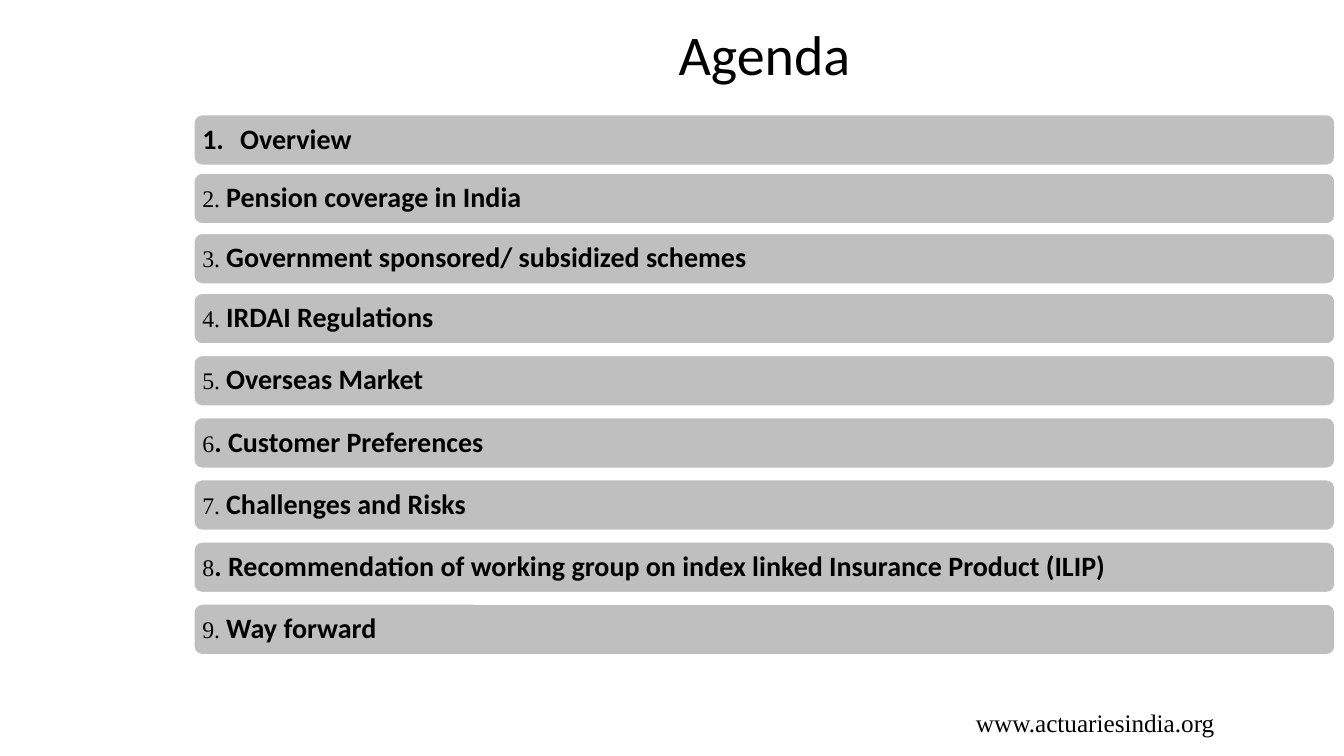
"""Build the agenda slide: a title, nine numbered bars and a web address."""
from dataclasses import dataclass

from lxml import etree
from pptx import Presentation
from pptx.dml.color import RGBColor
from pptx.enum.shapes import MSO_SHAPE
from pptx.enum.text import MSO_ANCHOR, PP_ALIGN
from pptx.oxml.ns import qn
from pptx.util import Pt

ROUNDED = MSO_SHAPE.ROUNDED_RECTANGLE
MIDDLE, TOP = MSO_ANCHOR.MIDDLE, MSO_ANCHOR.TOP
LEFT, CENTER = PP_ALIGN.LEFT, PP_ALIGN.CENTER


@dataclass(frozen=True)
class Theme:
    ink: RGBColor = RGBColor(0x00, 0x00, 0x00)
    bar: RGBColor = RGBColor(0xBF, 0xBF, 0xBF)
    edge: RGBColor = RGBColor(0xFF, 0xFF, 0xFF)
    sans: str = "Calibri"
    serif: str = "Times New Roman"
    title: int = 40
    topic: int = 20
    number: int = 17
    footer: int = 18


class Deck:
    def __init__(self, theme, slide):
        self.theme = theme
        self.slide = slide

    def run(self, p, text, size, name, bold=False):
        r = p.add_run()
        r.text = text
        for key, value in {"size": Pt(size), "name": name, "bold": bold}.items():
            setattr(r.font, key, value)
        r.font.color.rgb = self.theme.ink

    def text(self, box, text, size, name, align=LEFT, anchor=TOP):
        sp = self.slide.shapes.add_textbox(*map(Pt, box))
        tf = sp.text_frame
        for key, value in {"word_wrap": True, "vertical_anchor": anchor}.items():
            setattr(tf, key, value)
        p = tf.paragraphs[0]
        p.alignment = align
        self.run(p, text, size, name)

    def auto_number(self, p, indent):
        pPr = p._p.get_or_add_pPr()
        pPr.set("marL", str(Pt(indent)))
        pPr.set("indent", str(-Pt(indent)))
        etree.SubElement(pPr, qn("a:buFont"), typeface="+mj-lt")
        etree.SubElement(pPr, qn("a:buAutoNum"), type="arabicPeriod")

    def bar(self, box, number, topic):
        t = self.theme
        sp = self.slide.shapes.add_shape(ROUNDED, *map(Pt, box))
        sp.shadow.inherit = False
        sp.fill.solid()
        sp.fill.fore_color.rgb = t.bar
        sp.line.color.rgb = t.edge
        sp.line.width = Pt(2)
        tf = sp.text_frame
        frame = {"word_wrap": True, "vertical_anchor": MIDDLE}
        frame.update({f"margin_{side}": Pt(4.7) for side in ("left", "top", "right", "bottom")})
        for key, value in frame.items():
            setattr(tf, key, value)
        p = tf.paragraphs[0]
        for key, value in {"alignment": LEFT, "line_spacing": 0.9}.items():
            setattr(p, key, value)
        if number:
            self.run(p, number, t.number, t.serif)
        else:
            self.auto_number(p, 27)
        self.run(p, topic, t.topic, t.sans, True)


AGENDA = [
    ("", "Overview"),
    ("2. ", "Pension coverage in India"),
    ("3. ", "Government sponsored/ subsidized schemes"),
    ("4. ", "IRDAI Regulations"),
    ("5. ", "Overseas Market"),
    ("6", ". Customer Preferences"),
    ("7. ", "Challenges and Risks"),
    ("8", ". Recommendation of working group on index linked Insurance Product (ILIP)"),
    ("9. ", "Way forward"),
]
BAR_LEFT, BAR_WIDTH, BAR_HEIGHT = 138, 816, 37.2
FIRST_TOPS = [81.4, 123.2, 166.2]
LOWER_TOP, LOWER_PITCH = 209, 44.4


def main():
    prs = Presentation()
    prs.slide_width, prs.slide_height = Pt(960), Pt(540)
    theme = Theme()
    deck = Deck(theme, prs.slides.add_slide(prs.slide_layouts[6]))

    deck.text((BAR_LEFT, 9.5, BAR_WIDTH, 57.6), "Agenda", theme.title, theme.sans, CENTER, MIDDLE)
    lower_count = len(AGENDA) - len(FIRST_TOPS)
    tops = FIRST_TOPS + [LOWER_TOP + i * LOWER_PITCH for i in range(lower_count)]
    for top, (number, topic) in zip(tops, AGENDA):
        deck.bar((BAR_LEFT, top, BAR_WIDTH, BAR_HEIGHT), number, topic)
    deck.text((690, 502, 228, 29), "www.actuariesindia.org", theme.footer, theme.serif)

    prs.save("out.pptx")


if __name__ == "__main__":
    main()
